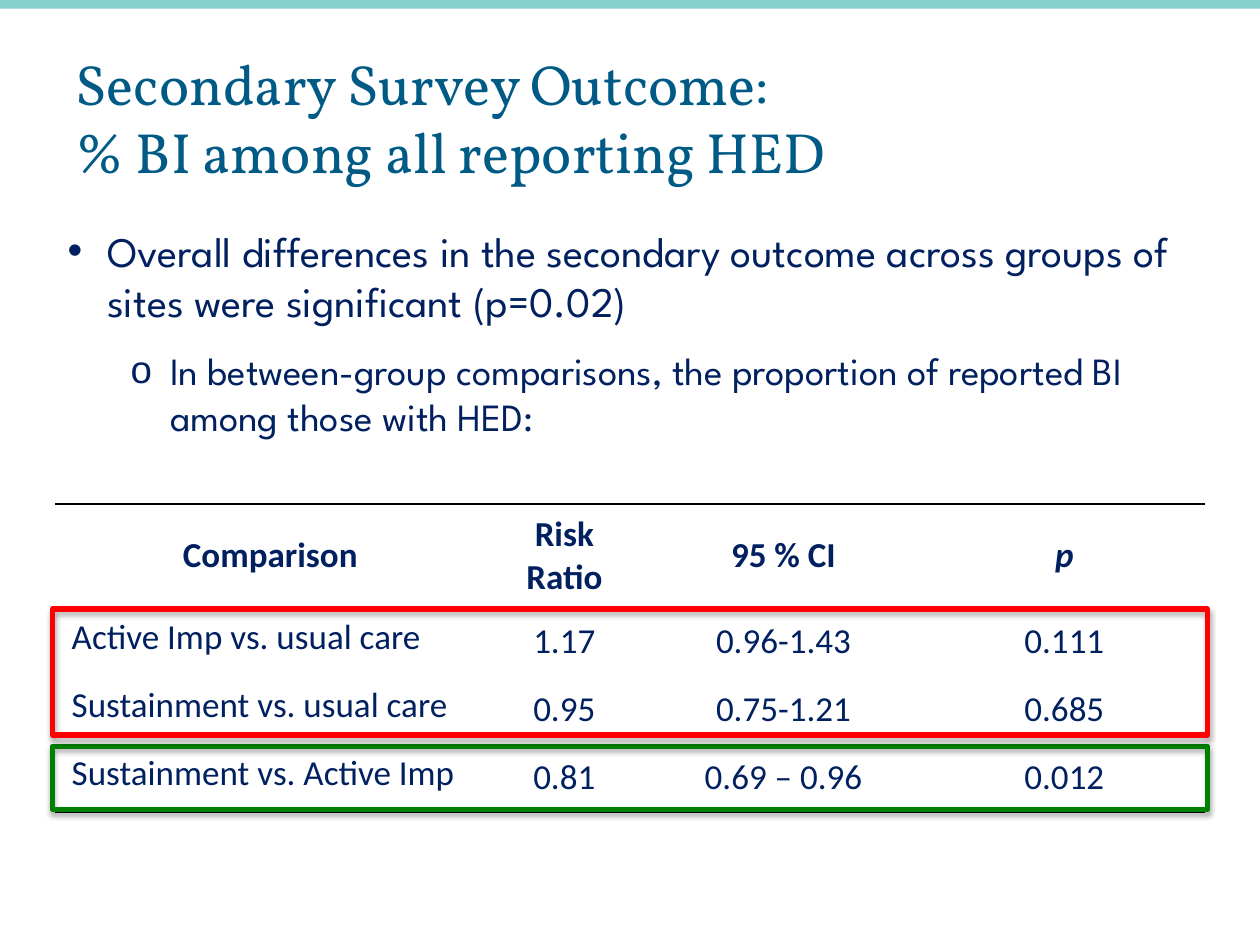
from dataclasses import dataclass
from typing import Any

from lxml import etree
from pptx import Presentation
from pptx.dml.color import RGBColor
from pptx.enum.shapes import MSO_SHAPE
from pptx.enum.text import MSO_ANCHOR, MSO_AUTO_SIZE, PP_ALIGN
from pptx.oxml.ns import qn
from pptx.util import Pt

RECT = MSO_SHAPE.RECTANGLE
MIDDLE, TOP, BOTTOM = MSO_ANCHOR.MIDDLE, MSO_ANCHOR.TOP, MSO_ANCHOR.BOTTOM
LEFT, CENTER = PP_ALIGN.LEFT, PP_ALIGN.CENTER
NO_FIT = MSO_AUTO_SIZE.NONE


@dataclass(frozen=True)
class Theme:
    bar: str = "85CFCD"
    title: str = "005A86"
    text: str = "002060"
    rule: str = "000000"
    red: str = "FF0000"
    green: str = "008000"
    title_font: str = "Vollkorn"
    body_font: str = "League Spartan"
    table_font: str = "Calibri"
    title_size: float = 32.4
    table_size: float = 20


@dataclass(frozen=True)
class Box:
    left: float
    top: float
    width: float
    height: float

    def lengths(self) -> list[int]:
        return [Pt(v) for v in (self.left, self.top, self.width, self.height)]


@dataclass(frozen=True)
class Bullet:
    text: str
    level: int
    mark: str
    indent: float
    size: float


@dataclass(frozen=True)
class Frame:
    box: Box
    color: str


THEME = Theme()
HANGING = 22.5
BULLETS = [
    Bullet("Overall differences in the secondary outcome across groups of sites "
           "were significant (p=0.02)", 0, "•", 22.5, 24),
    Bullet("In between-group comparisons, the proportion of reported BI among "
           "those with HED:", 1, "o", 58.5, 22),
]
ROWS = [
    ("Comparison", "Risk Ratio", "95 % CI", "p"),
    ("Active Imp vs. usual care", "1.17", "0.96-1.43", "0.111"),
    ("Sustainment vs. usual care", "0.95", "0.75-1.21", "0.685"),
    ("Sustainment vs. Active Imp", "0.81", "0.69 – 0.96", "0.012"),
]
COLUMN_WIDTHS = (246, 90, 160.5, 160.5)
ROW_HEIGHTS = (57.5, 39, 39, 39)
RULES = {0: ("lnT", "lnB"), 1: ("lnT",), len(ROWS) - 1: ("lnB",)}
FRAMES = [
    Frame(Box(30, 426.5, 660, 36), THEME.green),
    Frame(Box(30, 348, 660, 72), THEME.red),
]


def assign(target: Any, values: dict[str, Any]) -> None:
    for name, value in values.items():
        setattr(target, name, value)


def style_font(font: Any, name: str, size: float, color: str, **extra: bool) -> None:
    assign(font, {"name": name, "size": Pt(size), **extra})
    font.color.rgb = RGBColor.from_string(color)


def place(sp: Any, box: Box) -> None:
    assign(sp, dict(zip(("left", "top", "width", "height"), box.lengths())))


def add_bar(slide: Any) -> None:
    sp = slide.shapes.add_shape(RECT, *Box(0, 0, 720, 5).lengths())
    sp.shadow.inherit = False
    sp.fill.solid()
    sp.fill.fore_color.rgb = RGBColor.from_string(THEME.bar)
    sp.line.fill.background()


def fill_title(sp: Any) -> None:
    place(sp, Box(36, 19.5, 648, 90))
    tf = sp.text_frame
    assign(tf, {"auto_size": NO_FIT, "vertical_anchor": BOTTOM, "word_wrap": True})
    tf.text = "Secondary Survey Outcome: \v% BI among all reporting HED"
    p = tf.paragraphs[0]
    assign(p, {"alignment": LEFT, "line_spacing": Pt(39)})
    for r in p.runs:
        style_font(r.font, THEME.title_font, THEME.title_size, THEME.title)


def fill_body(sp: Any) -> None:
    place(sp, Box(31.5, 125, 674, 131))
    tf = sp.text_frame
    assign(tf, {"auto_size": NO_FIT, "vertical_anchor": TOP, "word_wrap": True})
    for i, bullet in enumerate(BULLETS):
        p = tf.add_paragraph() if i else tf.paragraphs[0]
        assign(p, {"level": bullet.level, "alignment": LEFT,
                   "space_before": Pt(0), "space_after": Pt(12)})
        pPr = p._p.get_or_add_pPr()
        pPr.set("marL", str(Pt(bullet.indent)))
        pPr.set("indent", str(-Pt(HANGING)))
        etree.SubElement(pPr, qn("a:buChar"), char=bullet.mark)
        r = p.add_run()
        r.text = bullet.text
        style_font(r.font, THEME.body_font, bullet.size, THEME.text)


def set_borders(cell: Any, ruled: tuple[str, ...]) -> None:
    tcPr = cell._tc.get_or_add_tcPr()
    for i, side in enumerate(("lnL", "lnR", "lnT", "lnB")):
        ln = etree.Element(qn(f"a:{side}"), w=str(Pt(1)))
        if side in ruled:
            fill = etree.SubElement(ln, qn("a:solidFill"))
            etree.SubElement(fill, qn("a:srgbClr"), val=THEME.rule)
        else:
            etree.SubElement(ln, qn("a:noFill"))
        tcPr.insert(i, ln)


def add_results(slide: Any) -> None:
    box = Box(31.5, 288, sum(COLUMN_WIDTHS), sum(ROW_HEIGHTS))
    table = slide.shapes.add_table(len(ROWS), len(COLUMN_WIDTHS), *box.lengths()).table
    assign(table, {"first_row": False, "horz_banding": False})
    for column, width in zip(table.columns, COLUMN_WIDTHS):
        column.width = Pt(width)
    for i, (row, height) in enumerate(zip(table.rows, ROW_HEIGHTS)):
        row.height = Pt(height)
        for j, (cell, text) in enumerate(zip(row.cells, ROWS[i])):
            header, label = i == 0, i > 0 and j == 0
            assign(cell, {"margin_left": Pt(9.5), "margin_right": Pt(9.5),
                          "margin_top": Pt(5), "margin_bottom": Pt(5),
                          "vertical_anchor": TOP if label else MIDDLE})
            cell.fill.background()
            set_borders(cell, RULES.get(i, ()))
            p = cell.text_frame.paragraphs[0]
            p.alignment = LEFT if label else CENTER
            r = p.add_run()
            r.text = text
            style_font(r.font, THEME.table_font, THEME.table_size, THEME.text,
                       bold=header, italic=header and text == "p")


def add_frame(slide: Any, frame: Frame) -> None:
    sp = slide.shapes.add_shape(RECT, *frame.box.lengths())
    sp.fill.background()
    sp.line.color.rgb = RGBColor.from_string(frame.color)
    sp.line.width = Pt(3)
    sp.shadow.inherit = False
    effects = sp._element.spPr.find(qn("a:effectLst"))
    shadow = etree.SubElement(effects, qn("a:outerShdw"), blurRad=str(Pt(3.1)),
                              dist=str(Pt(1.8)), dir="5400000", rotWithShape="0")
    color = etree.SubElement(shadow, qn("a:srgbClr"), val=THEME.rule)
    etree.SubElement(color, qn("a:alpha"), val="35000")


def main() -> None:
    prs = Presentation()
    assign(prs, {"slide_width": Pt(720), "slide_height": Pt(540)})
    slide = prs.slides.add_slide(prs.slide_layouts[1])
    add_bar(slide)
    fill_title(slide.shapes.title)
    fill_body(slide.placeholders[1])
    add_results(slide)
    for frame in FRAMES:
        add_frame(slide, frame)
    prs.save("out.pptx")


if __name__ == "__main__":
    main()
